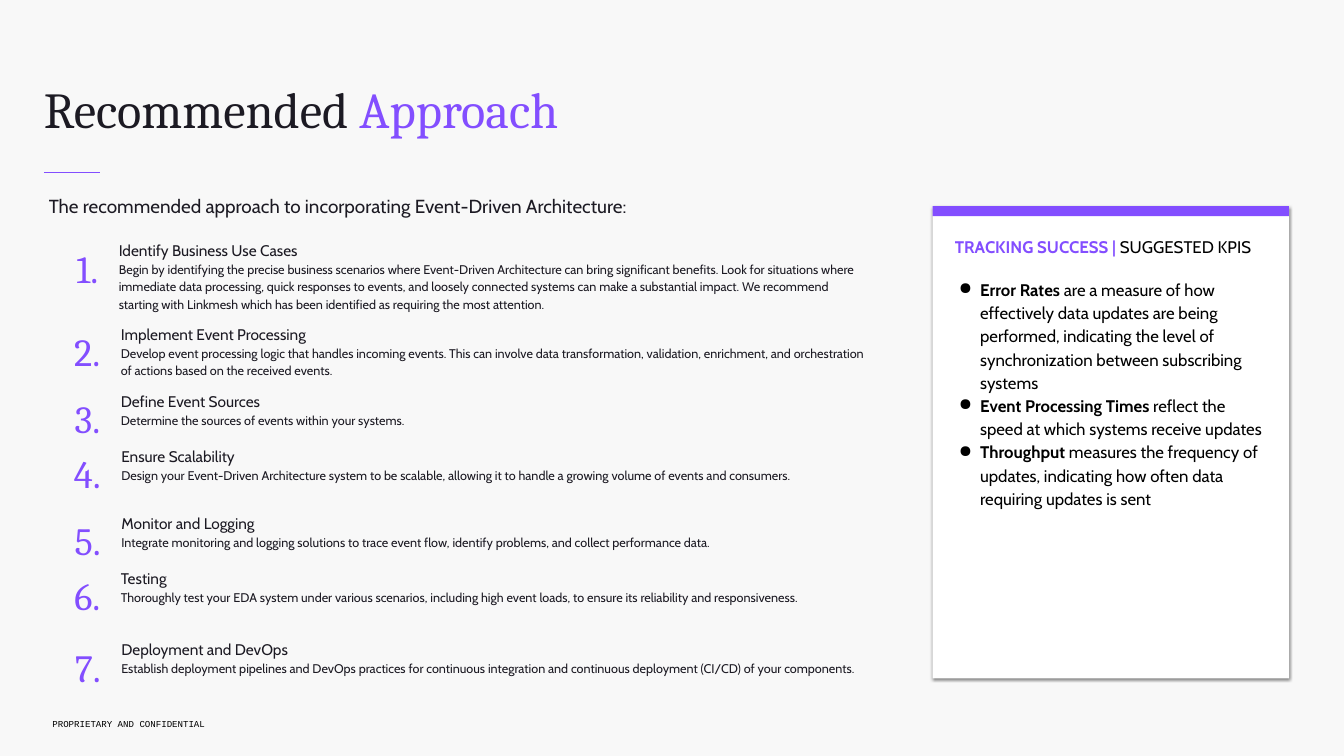
from lxml.etree import SubElement
from pptx import Presentation
from pptx.dml.color import RGBColor
from pptx.enum.shapes import MSO_CONNECTOR, MSO_SHAPE
from pptx.enum.text import MSO_ANCHOR, MSO_AUTO_SIZE, PP_ALIGN
from pptx.oxml.ns import qn
from pptx.util import Inches, Pt

PURPLE = RGBColor(0x83, 0x4E, 0xFF)
INK = RGBColor(0x1C, 0x1A, 0x23)
BLACK = RGBColor(0, 0, 0)
WHITE = RGBColor(0xFF, 0xFF, 0xFF)
PAPER = RGBColor(0xF8, 0xF8, 0xF8)
BODY_FONT, DISPLAY_FONT = "Cabin", "Cambria"

presentation = Presentation()
presentation.slide_width = Inches(26.67)
presentation.slide_height = Inches(15)
slide = presentation.slides.add_slide(presentation.slide_layouts[5])
slide.background.fill.solid()
slide.background.fill.fore_color.rgb = PAPER


def share(left, top, width, height):
    """Turn percentages of the slide's width and height into lengths."""
    across, down = presentation.slide_width / 100, presentation.slide_height / 100
    return round(left * across), round(top * down), round(width * across), round(height * down)


def add_text(box, lines, inset=0.1):
    """Write (text, size, font, color) lines, one paragraph each."""
    frame = box.text_frame
    frame.word_wrap = True
    frame.auto_size = MSO_AUTO_SIZE.SHAPE_TO_FIT_TEXT if inset else MSO_AUTO_SIZE.NONE
    frame.margin_left = frame.margin_right = Inches(inset)
    frame.margin_top = frame.margin_bottom = Inches(inset)
    for index, (text, size, font, color) in enumerate(lines):
        paragraph = frame.add_paragraph() if index else frame.paragraphs[0]
        paragraph.line_spacing = 1.15
        paragraph.font.size = Pt(size)
        paragraph.font.name = font
        paragraph.font.color.rgb = color
        if text:
            paragraph.add_run().text = text
    return frame


# Footer
footer = slide.shapes.add_textbox(*share(3.9, 94.33, 21.78, 2.6))
frame = add_text(footer, [("PROPRIETARY AND CONFIDENTIAL", 13, "Courier New", BLACK)], inset=0)
frame.vertical_anchor = MSO_ANCHOR.MIDDLE

# Title and the short rule under it
title = slide.shapes.title
title.left, title.top, title.width, title.height = share(3.26, 10.8, 87.21, 10.33)
frame = add_text(title, [("Recommended", 72, DISPLAY_FONT, INK)], inset=0)
frame.vertical_anchor = MSO_ANCHOR.TOP
paragraph = frame.paragraphs[0]
paragraph.alignment = PP_ALIGN.LEFT
paragraph.line_spacing = 0.97
accent = paragraph.add_run()
accent.text = " Approach"
accent.font.color.rgb = PURPLE

left, top, width, _ = share(3.26, 22.8, 4.16, 0)
rule = slide.shapes.add_connector(MSO_CONNECTOR.STRAIGHT, left, top, left + width, top)
rule.line.color.rgb = PURPLE
rule.line.width = Pt(1)
SubElement(rule._element.spPr, qn("a:effectLst"))

# KPI card: white panel with a soft shadow, purple bar on top
for kind, height, color in (
    (MSO_SHAPE.ROUNDED_RECTANGLE, 62.47, WHITE),
    (MSO_SHAPE.RECTANGLE, 1.33, PURPLE),
):
    shape = slide.shapes.add_shape(kind, *share(69.4, 27.27, 26.51, height))
    shape.fill.solid()
    shape.fill.fore_color.rgb = color
    shape.line.fill.background()
    shape.shadow.inherit = False
    if color == WHITE:
        shape.adjustments[0] = 0
        effects = shape._element.spPr.find(qn("a:effectLst"))
        shadow = SubElement(effects, qn("a:outerShdw"), blurRad=str(Pt(4.5)),
                            dist=str(Pt(1.5)), dir="5400000", algn="bl", rotWithShape="0")
        shadow_color = SubElement(shadow, qn("a:srgbClr"), val=str(BLACK))
        SubElement(shadow_color, qn("a:alpha"), val="50000")

# KPI text: heading, then bullets that open in bold
kpis = [
    ("TRACKING SUCCESS | ", "SUGGESTED KPIS"),
    ("Error Rates", " are a measure of how effectively data updates are being performed, "
     "indicating the level of synchronization between subscribing systems"),
    ("Event Processing Times", " reflect the speed at which systems receive updates"),
    ("Throughput", " measures the frequency of updates, indicating how often data "
     "requiring updates is sent"),
]
kpi_box = slide.shapes.add_textbox(*share(70.68, 30.6, 23.92, 43.47))
frame = add_text(kpi_box, [("", 24, BODY_FONT, BLACK)] * len(kpis))
for paragraph, (lead, rest) in zip(frame.paragraphs, kpis):
    lead_run = paragraph.add_run()
    lead_run.text = lead
    lead_run.font.bold = True
    paragraph.add_run().text = rest
    if paragraph.text.startswith("TRACKING"):
        lead_run.font.color.rgb = PURPLE
        paragraph.line_spacing = 1.0
        paragraph.space_after = Pt(29)
    else:
        properties = paragraph._p.get_or_add_pPr()
        properties.set("marL", str(Inches(0.5)))
        properties.set("indent", str(Inches(-0.42)))
        bullet = properties.find(qn("a:defRPr"))
        for tag, name, value in (("a:buClr", None, None), ("a:buChar", "char", "●")):
            element = properties.makeelement(qn(tag), {name: value} if name else {})
            bullet.addprevious(element)
            if tag == "a:buClr":
                SubElement(element, qn("a:srgbClr"), val=str(BLACK))

# Introduction
intro = slide.shapes.add_textbox(*share(3.26, 24.6, 58.94, 4.4))
add_text(intro, [("The recommended approach to incorporating Event-Driven Architecture:",
                  27, BODY_FONT, INK)])

# Numbered steps: left, top, width, height, heading, description
steps = [
    (8.47, 30.87, 56.58, 10.87, "Identify Business Use Cases",
     "Begin by identifying the precise business scenarios where Event-Driven Architecture can "
     "bring significant benefits. Look for situations where immediate data processing, quick "
     "responses to events, and loosely connected systems can make a substantial impact. We "
     "recommend starting with Linkmesh which has been identified as requiring the most attention."),
    (8.62, 41.93, 56.58, 8.53, "Implement Event Processing",
     "Develop event processing logic that handles incoming events. This can involve data "
     "transformation, validation, enrichment, and orchestration of actions based on the "
     "received events."),
    (8.62, 50.8, 56.58, 6.2, "Define Event Sources",
     "Determine the sources of events within your systems."),
    (8.66, 58.07, 54.11, 8.53, "Ensure Scalability",
     "Design your Event-Driven Architecture system to be scalable, allowing it to handle a "
     "growing volume of events and consumers."),
    (8.66, 66.93, 56.58, 6.2, "Monitor and Logging",
     "Integrate monitoring and logging solutions to trace event flow, identify problems, and "
     "collect performance data."),
    (8.62, 74.2, 56.58, 8.53, "Testing",
     "Thoroughly test your EDA system under various scenarios, including high event loads, to "
     "ensure its reliability and responsiveness."),
    (8.66, 83.67, 56.58, 10.87, "Deployment and DevOps",
     "Establish deployment pipelines and DevOps practices for continuous integration and "
     "continuous deployment (CI/CD) of your components."),
]
NUMBER_WIDTH, NUMBER_GAP = 4.57, 0.79
for number, (left, top, width, height, heading, description) in enumerate(steps, start=1):
    step_box = slide.shapes.add_textbox(*share(left, top, width, height))
    add_text(step_box, [(heading, 22, BODY_FONT, INK), (description, 18, BODY_FONT, INK)])
    number_left = left - NUMBER_GAP - NUMBER_WIDTH
    number_box = slide.shapes.add_textbox(*share(number_left, top - 0.07, NUMBER_WIDTH, 7.53))
    frame = add_text(number_box, [(f"{number}.", 55, DISPLAY_FONT, PURPLE)])
    frame.paragraphs[0].alignment = PP_ALIGN.RIGHT

presentation.save("out.pptx")
